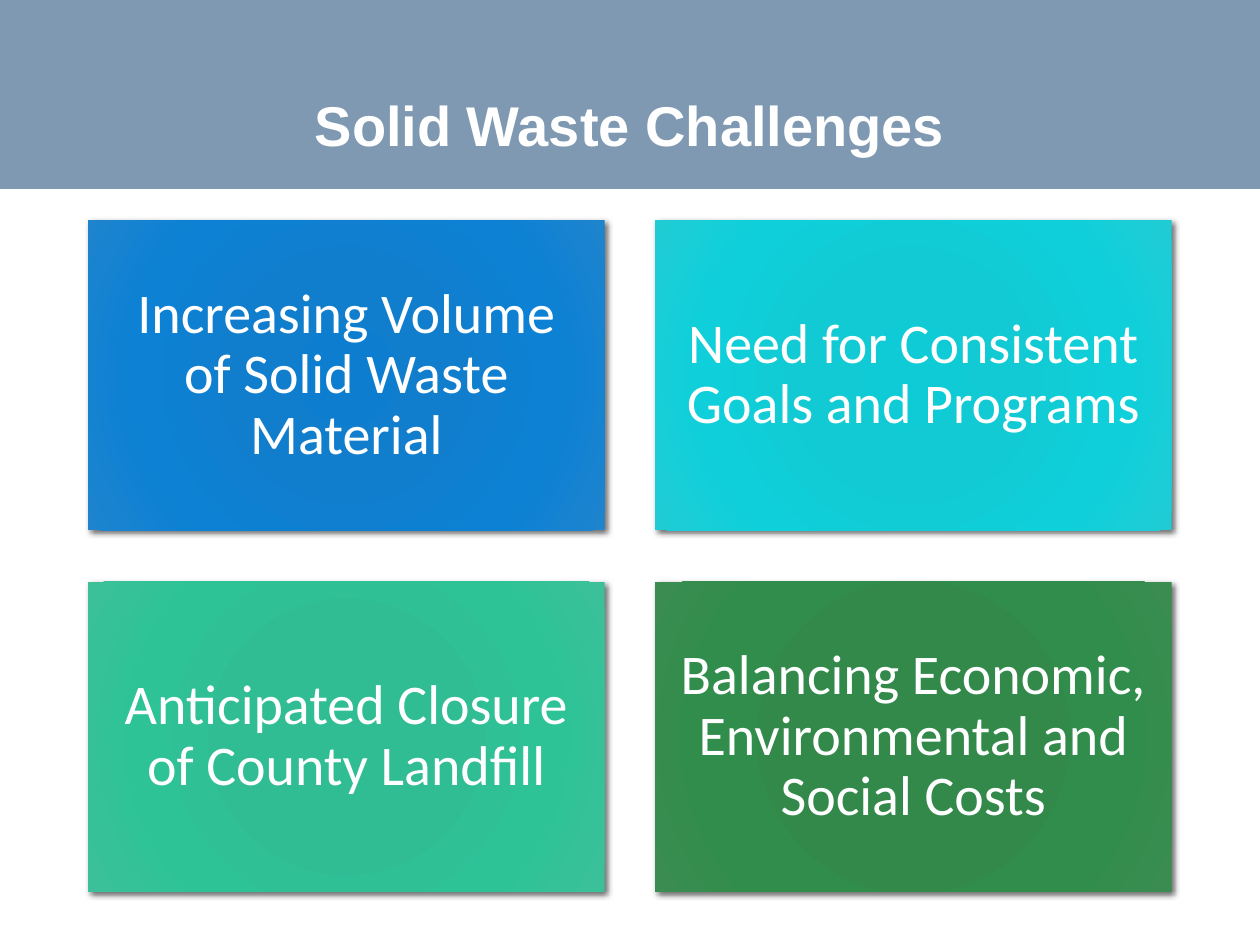
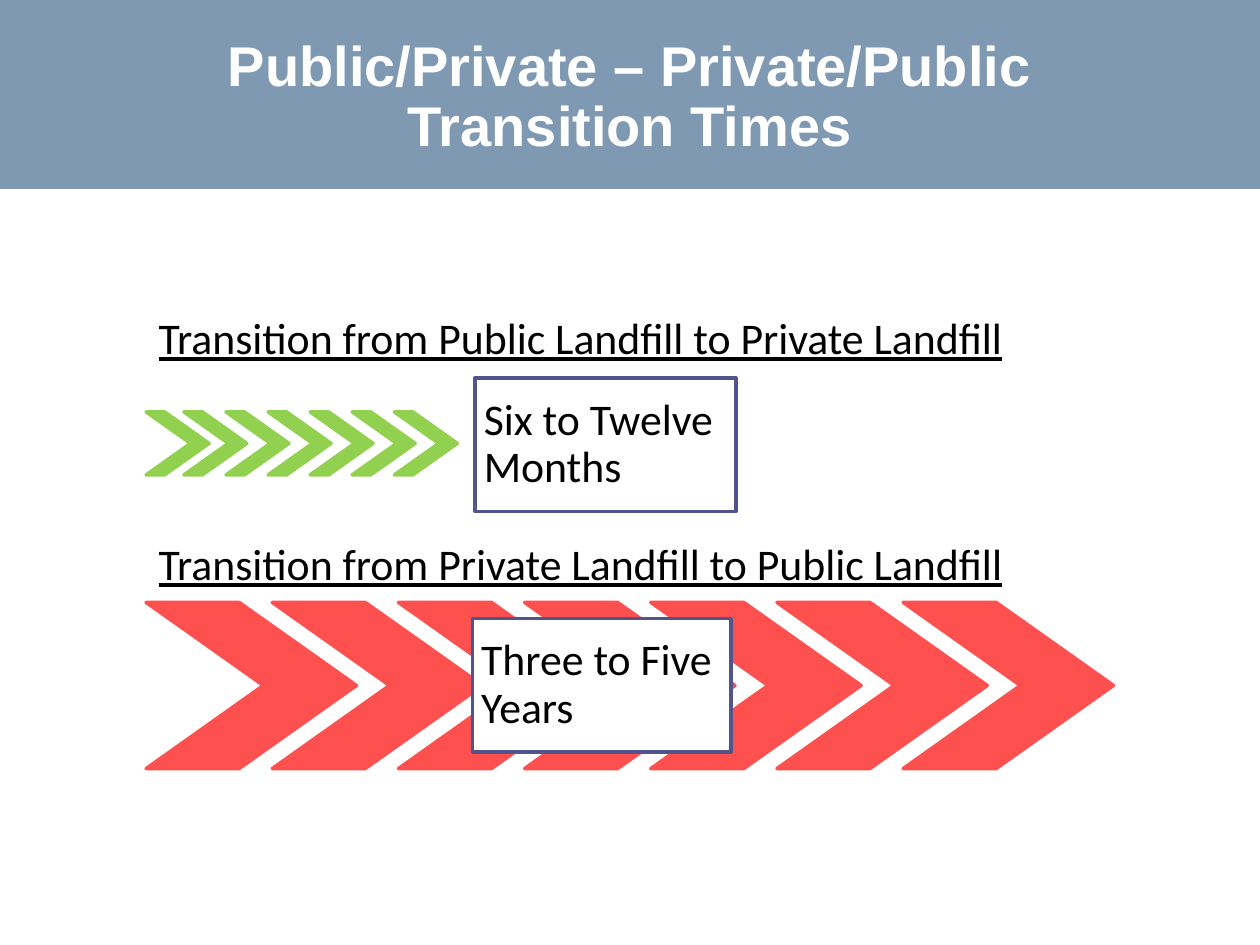
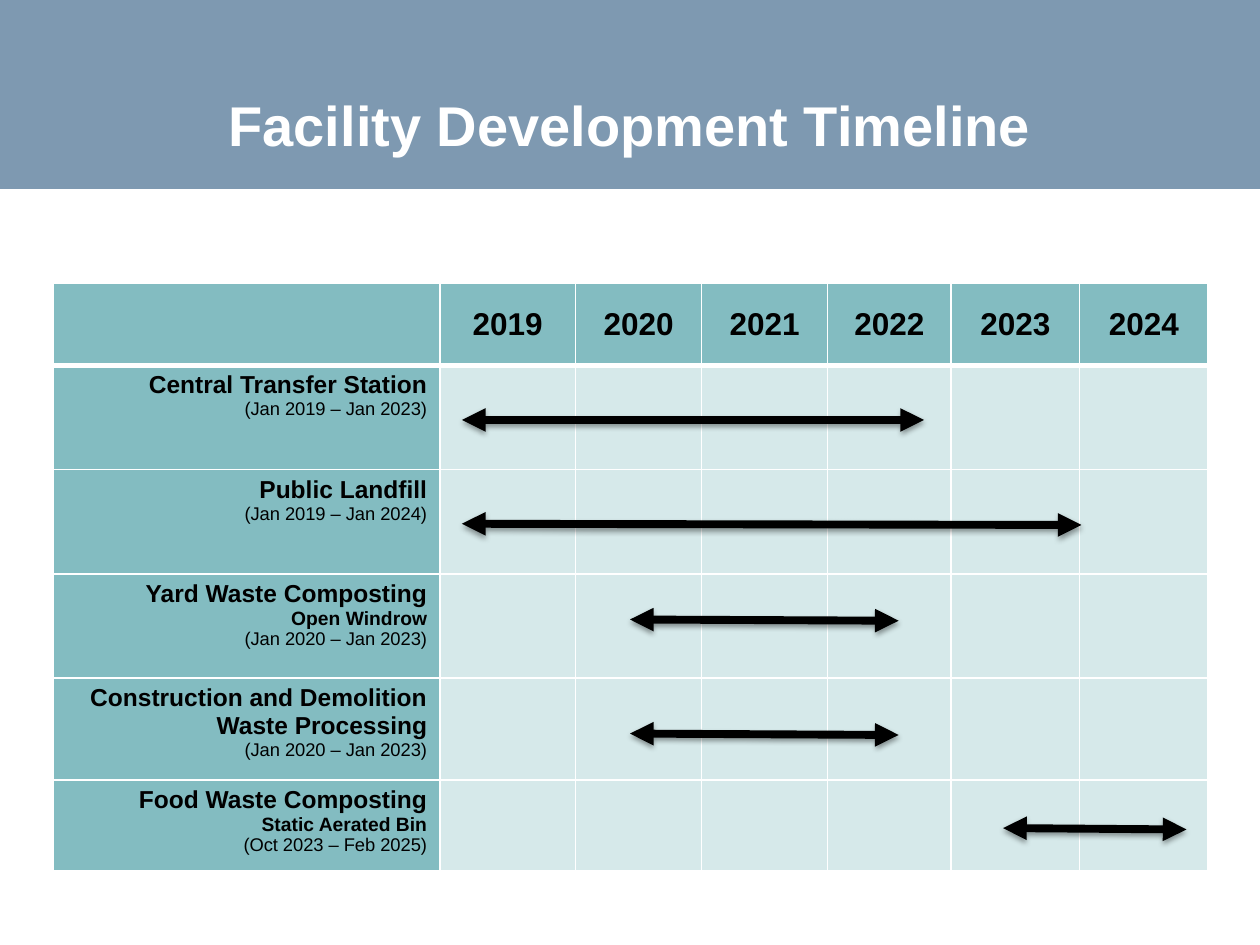
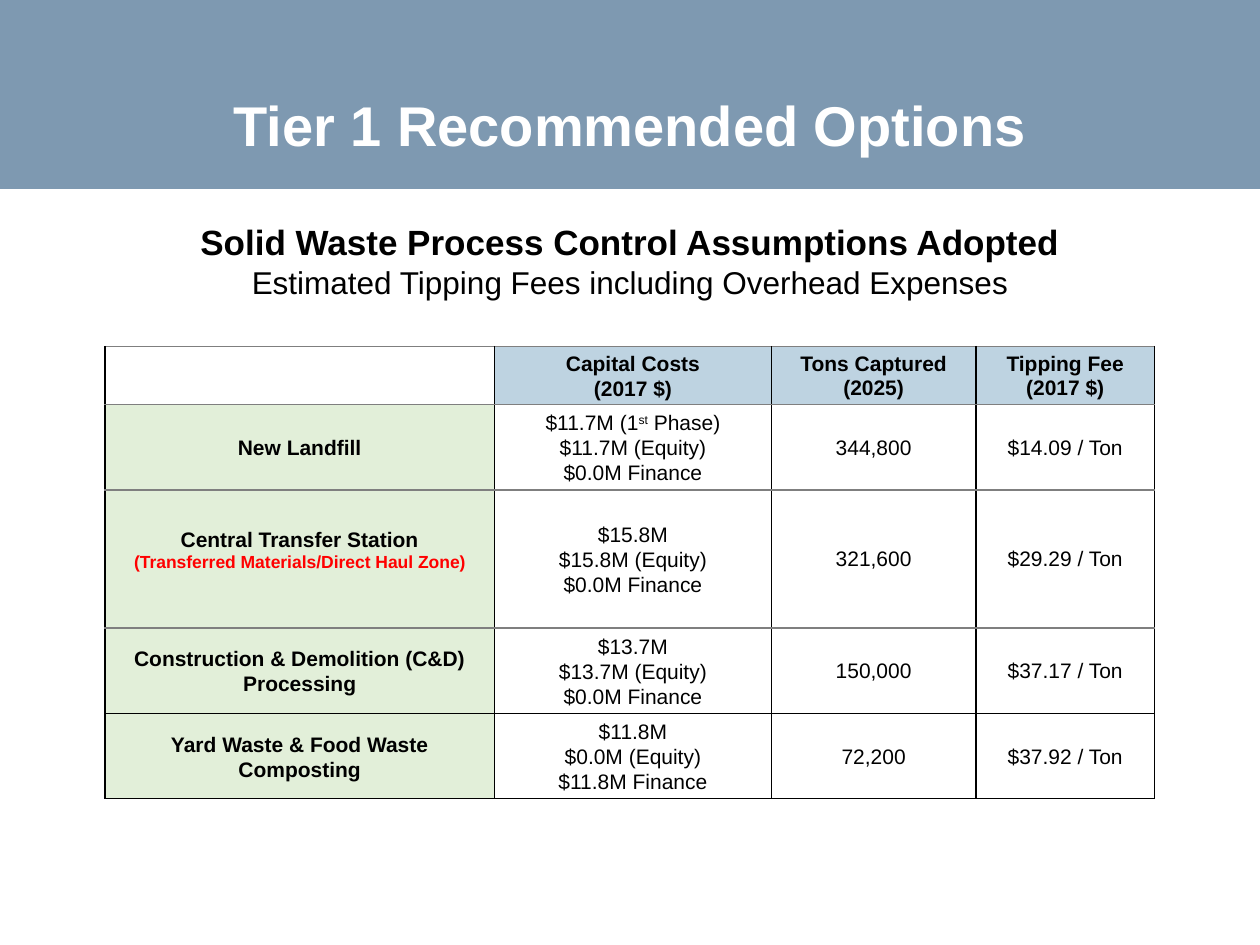
from dataclasses import dataclass
from typing import Optional, Sequence

from lxml.etree import SubElement
from pptx import Presentation
from pptx.dml.color import RGBColor
from pptx.enum.shapes import MSO_CONNECTOR as Connector, MSO_SHAPE as Shape
from pptx.enum.text import MSO_ANCHOR as Anchor, PP_ALIGN as Align
from pptx.oxml import parse_xml
from pptx.oxml.ns import nsdecls, qn
from pptx.util import Pt

# Shared colours and fonts
WHITE, BLACK, GREY, RED = "FFFFFF", "000000", "7F7F7F", "FF0000"
BAND, BOX_LINE = "7E99B1", "53548A"
TEAL, PALE_TEAL = "83BCC1", "D6E9EA"
PALE_BLUE, PALE_GREEN = "BED3E1", "E2EFD9"
SLIDE_WIDTH, SLIDE_HEIGHT = 720, 540


@dataclass(frozen=True)
class Style:
    size: float
    color: str = BLACK
    font: str = "Arial"
    bold: bool = False
    underline: bool = False


TITLE = Style(32, WHITE, bold=True)
CARD_TEXT = Style(32, WHITE, "Calibri")
HEADING = Style(25, font="Calibri", underline=True)
DURATION = Style(25, font="Calibri")
YEAR = Style(18, bold=True)
FACILITY = Style(14, bold=True)
METHOD = Style(11, bold=True)
DATES = Style(10.5)
LABEL = Style(12, bold=True)
VALUE = Style(12)
NOTE = Style(10, RED, bold=True)


@dataclass(frozen=True)
class Line:
    """One paragraph; text between carets is superscript."""
    text: str
    style: Style


@dataclass(frozen=True)
class Box:
    left: float
    top: float
    width: float
    height: float

    def lengths(self) -> list:
        return [Pt(value) for value in (self.left, self.top, self.width, self.height)]


@dataclass(frozen=True)
class Layout:
    align: Align = Align.LEFT
    anchor: Anchor = Anchor.MIDDLE
    margins: tuple = (7.2, 3.6, 7.2, 3.6)  # left, top, right, bottom
    spacing: Optional[object] = None


@dataclass(frozen=True)
class Card:
    text: str
    stops: tuple


@dataclass(frozen=True)
class Transition:
    heading: str
    heading_top: float
    color: str
    chevron: Box
    first_step: float
    step: float
    duration: str
    duration_box: Box


@dataclass(frozen=True)
class Phase:
    lines: tuple
    height: float
    arrow: tuple  # start x, start y, end x, end y


@dataclass(frozen=True)
class Option:
    label: tuple
    costs: tuple
    tons: str
    fee: str
    height: float
    label_bottom: float = 0


def rgb(color: str) -> RGBColor:
    return RGBColor.from_string(color)


# Text helpers
def write(frame, lines: Sequence[Line], layout: Layout) -> None:
    for index, line in enumerate(lines):
        paragraph = frame.add_paragraph() if index else frame.paragraphs[0]
        first, *rest = line.text.split("^")
        paragraph.text = first
        for position, piece in enumerate(rest, 1):
            run = paragraph.add_run()
            run.text = piece
            if position % 2:
                run._r.get_or_add_rPr().set("baseline", "30000")
        paragraph.alignment = layout.align
        if layout.spacing:
            paragraph.line_spacing = layout.spacing
        for run in paragraph.runs:
            font, style = run.font, line.style
            font.size, font.name = Pt(style.size), style.font
            font.bold, font.underline = style.bold, style.underline
            font.color.rgb = rgb(style.color)


def set_frame(frame, lines: Sequence[Line], layout: Layout) -> None:
    frame.word_wrap = True
    frame.vertical_anchor = layout.anchor
    (frame.margin_left, frame.margin_top,
     frame.margin_right, frame.margin_bottom) = map(Pt, layout.margins)
    write(frame, lines, layout)


def add_text(slide, box: Box, lines: Sequence[Line], layout: Layout) -> None:
    set_frame(slide.shapes.add_textbox(*box.lengths()).text_frame, lines, layout)


# Shape helpers
def add_block(slide, kind: Shape, box: Box, fill: str, line: Optional[str] = None):
    shape = slide.shapes.add_shape(kind, *box.lengths())
    shape.shadow.inherit = False
    shape.fill.solid()
    shape.fill.fore_color.rgb = rgb(fill)
    if line:
        shape.line.color.rgb = rgb(line)
        shape.line.width = Pt(2)
    else:
        shape.line.fill.background()
    return shape


def add_shadow(properties, alpha: int, blur: float, distance: float, angle: int) -> None:
    effects = properties.find(qn("a:effectLst"))
    if effects is None:
        effects = SubElement(properties, qn("a:effectLst"))
    effects.append(parse_xml(
        f'<a:outerShdw {nsdecls("a")} blurRad="{Pt(blur)}" dist="{Pt(distance)}" '
        f'dir="{angle * 60000}" algn="ctr" rotWithShape="0"><a:srgbClr val="{BLACK}">'
        f'<a:alpha val="{alpha * 1000}"/></a:srgbClr></a:outerShdw>'))


def set_radial_fill(shape, colors: Sequence[str]) -> None:
    stops = "".join(
        f'<a:gs pos="{place * 1000}"><a:srgbClr val="{color}"/></a:gs>'
        for place, color in zip((0, 34, 70, 100), colors))
    gradient = parse_xml(
        f'<a:gradFill {nsdecls("a")} rotWithShape="1"><a:gsLst>{stops}</a:gsLst>'
        '<a:path path="circle"><a:fillToRect l="100000" t="100000" r="100000" '
        'b="100000"/></a:path></a:gradFill>')
    properties = shape._element.spPr
    properties.replace(properties.find(qn("a:solidFill")), gradient)


def add_double_arrow(slide, points: Sequence[float]) -> None:
    arrow = slide.shapes.add_connector(Connector.STRAIGHT, *map(Pt, points))
    arrow.line.color.rgb = rgb(BLACK)
    arrow.line.width = Pt(4.5)
    properties = arrow._element.spPr
    for end in ("a:headEnd", "a:tailEnd"):
        SubElement(properties.find(qn("a:ln")), qn(end)).set("type", "triangle")
    add_shadow(properties, 38, 3.1, 1.6, 90)


# Table helpers
def add_plain_table(slide, left: float, top: float,
                    widths: Sequence[float], heights: Sequence[float]):
    box = Box(left, top, sum(widths), sum(heights))
    table = slide.shapes.add_table(len(heights), len(widths), *box.lengths()).table
    table.first_row = table.horz_banding = False
    for column, width in zip(table.columns, widths):
        column.width = Pt(width)
    for row, height in zip(table.rows, heights):
        row.height = Pt(height)
    return table


def fill_cell(cell, fill: str, borders: dict, lines: Sequence[Line] = (),
              layout: Layout = Layout()) -> None:
    properties = cell._tc.get_or_add_tcPr()
    for side in "LRTB":
        color, width = borders[side]
        properties.append(parse_xml(
            f'<a:ln{side} {nsdecls("a")} w="{Pt(width)}"><a:solidFill>'
            f'<a:srgbClr val="{color}"/></a:solidFill></a:ln{side}>'))
    cell.fill.solid()
    cell.fill.fore_color.rgb = rgb(fill)
    cell.vertical_anchor = layout.anchor
    (cell.margin_left, cell.margin_top,
     cell.margin_right, cell.margin_bottom) = map(Pt, layout.margins)
    write(cell.text_frame, lines, layout)


def add_titled_slide(presentation, title: str):
    slide = presentation.slides.add_slide(presentation.slide_layouts[6])
    add_block(slide, Shape.RECTANGLE, Box(0, 0, SLIDE_WIDTH, 108), BAND)
    add_text(slide, Box(0, 21.6, SLIDE_WIDTH, 68.4), [Line(title, TITLE)],
             Layout(Align.CENTER, Anchor.BOTTOM, (28.8, 0, 28.8, 0), Pt(34)))
    return slide


# Slide 1: grid of challenge cards
CARDS = (
    Card("Increasing Volume\vof Solid Waste Material",
         ("0D7ECF", "117ECD", "0D81D4", "1E84CE")),
    Card("Need for Consistent Goals and Programs",
         ("0ECBD5", "12CAD3", "0FD0DA", "20CBD4")),
    Card("Anticipated Closure of County Landfill",
         ("2DBE94", "30BD94", "2EC397", "3CC09A")),
    Card("Balancing Economic, Environmental and Social Costs",
         ("2F8949", "32894A", "318D4B", "3A8C51")),
)


def build_challenges(presentation) -> None:
    slide = add_titled_slide(presentation, "Solid Waste Challenges")
    width, height, gap = 295.2, 177.1, 28.8
    layout = Layout(Align.CENTER, margins=(9.6,) * 4, spacing=0.9)
    for index, card in enumerate(CARDS):
        row, column = divmod(index, 2)
        box = Box(50.4 + column * (width + gap), 126 + row * (height + gap + 0.7),
                  width, height)
        shape = add_block(slide, Shape.RECTANGLE, box, card.stops[0])
        set_radial_fill(shape, card.stops)
        add_shadow(shape._element.spPr, 60, 3.5, 2, 45)
        set_frame(shape.text_frame, [Line(card.text, CARD_TEXT)], layout)


# Slide 2: chevron rows
TRANSITIONS = (
    Transition("Transition from Public Landfill to Private Landfill", 168.5, "92D050",
               Box(83.5, 235.4, 36, 36), 21.6, 24.05,
               "Six to Twelve Months", Box(271.5, 216, 149, 76.3)),
    Transition("Transition from Private Landfill to Public Landfill", 297.4, "FF5050",
               Box(83.5, 344.2, 120.2, 95), 72.1, 72.1,
               "Three to Five Years", Box(270, 353.5, 147.6, 76.3)),
)


def build_transitions(presentation) -> None:
    slide = add_titled_slide(
        presentation, "Public/Private – Private/Public\vTransition Times")
    for transition in TRANSITIONS:
        add_text(slide, Box(83.5, transition.heading_top, 512.6, 46.8),
                 [Line(transition.heading, HEADING)],
                 Layout(anchor=Anchor.BOTTOM, margins=(7.2,) * 4, spacing=0.9))
        first = transition.chevron
        second_left = first.left + transition.first_step
        lefts = [first.left] + [second_left + i * transition.step for i in range(6)]
        for left in lefts:
            chevron = add_block(slide, Shape.CHEVRON,
                                Box(left, first.top, first.width, first.height),
                                transition.color, transition.color)
            chevron.adjustments[0] = 0.706
        duration = add_block(slide, Shape.RECTANGLE, transition.duration_box,
                             WHITE, BOX_LINE)
        set_frame(duration.text_frame, [Line(transition.duration, DURATION)],
                  Layout(margins=(5,) * 4, spacing=0.9))


# Slide 3: timeline table with arrows
PHASES = (
    Phase((Line("Central Transfer Station", FACILITY),
           Line("(Jan 2019 – Jan 2023)", DATES)), 59.6, (264, 240, 528, 240)),
    Phase((Line("Public Landfill", FACILITY),
           Line("(Jan 2019 – Jan 2024)", DATES)), 59.6, (264, 299.3, 618, 300)),
    Phase((Line("Yard Waste Composting", FACILITY), Line("Open Windrow", METHOD),
           Line("(Jan 2020 – Jan 2023)", DATES)), 59.6, (360, 354, 513.5, 354.7)),
    Phase((Line("Construction and Demolition Waste Processing", FACILITY),
           Line("(Jan 2020 – Jan 2023)", DATES)), 58.2, (360, 419.2, 513.5, 420)),
    Phase((Line("Food Waste Composting", FACILITY), Line("Static Aerated Bin", METHOD),
           Line("(Oct 2023 – Feb 2025)", DATES)), 52, (573.2, 473.2, 678, 474)),
)


def build_timeline(presentation) -> None:
    slide = add_titled_slide(presentation, "Facility Development Timeline")
    widths = (221.2, 77.5, 72, 72, 70.6, 73.5, 73.5)
    table = add_plain_table(slide, 30.2, 162, widths,
                            [46.8] + [phase.height for phase in PHASES])
    thin = dict.fromkeys("LRTB", (WHITE, 1))
    thick = (WHITE, 3)
    for column in range(len(widths)):
        year = [Line(str(2018 + column), YEAR)] if column else []
        fill_cell(table.cell(0, column), TEAL, {**thin, "B": thick}, year,
                  Layout(Align.CENTER))
    for row, phase in enumerate(PHASES, 1):
        borders = {**thin, "T": thick} if row == 1 else thin
        fill_cell(table.cell(row, 0), TEAL, borders, phase.lines,
                  Layout(Align.RIGHT, Anchor.TOP))
        for column in range(1, len(widths)):
            fill_cell(table.cell(row, column), PALE_TEAL, borders)
    for phase in PHASES:
        add_double_arrow(slide, phase.arrow)


# Slide 4: cost table
COST_HEADERS = (
    (),
    ("Capital Costs", "(2017 $)"),
    ("Tons Captured (2025)",),
    ("Tipping Fee", "(2017 $)"),
)
OPTIONS = (
    Option((Line("New Landfill", LABEL),),
           ("$11.7M (1^st^ Phase)", "$11.7M (Equity)", "$0.0M Finance"),
           "344,800", "$14.09 / Ton", 48.8),
    Option((Line("Central Transfer Station", LABEL),
            Line("(Transferred Materials/Direct Haul Zone)", NOTE)),
           ("$15.8M", "$15.8M (Equity)", "$0.0M Finance"),
           "321,600", "$29.29 / Ton", 79, label_bottom=11.5),
    Option((Line("Construction & Demolition (C&D) Processing", LABEL),),
           ("$13.7M", "$13.7M (Equity)", "$0.0M Finance"),
           "150,000", "$37.17 / Ton", 48.8),
    Option((Line("Yard Waste & Food Waste Composting", LABEL),),
           ("$11.8M", "$0.0M (Equity)", "$11.8M Finance"),
           "72,200", "$37.92 / Ton", 48.8),
)


def build_options(presentation) -> None:
    slide = add_titled_slide(presentation, "Tier 1 Recommended Options")
    add_text(slide, Box(0, 126, SLIDE_WIDTH, 356.4),
             [Line("Solid Waste Process Control Assumptions Adopted",
                   Style(20, bold=True)),
              Line("Estimated Tipping Fees including Overhead Expenses", Style(18))],
             Layout(Align.CENTER, Anchor.TOP, (28.8, 0, 28.8, 0)))
    table = add_plain_table(slide, 60, 198, (222.5, 158.4, 116.7, 102.3),
                            [33.1] + [option.height for option in OPTIONS])

    def layout(column: int, bottom: float = 0) -> Layout:
        margins = (5, 0.7, 5, bottom) if column < 2 else (0,) * 4
        return Layout(Align.CENTER, margins=margins, spacing=1.06)

    black, grey = (BLACK, 1), (GREY, 1)
    edges = (grey, grey, grey, grey, black, black)  # horizontal rules, top to bottom

    def borders(row: int) -> dict:
        return {"L": black, "R": black, "T": edges[row], "B": edges[row + 1]}

    for column, header in enumerate(COST_HEADERS):
        fill_cell(table.cell(0, column), PALE_BLUE if header else WHITE, borders(0),
                  [Line(text, LABEL) for text in header], layout(column))
    for row, option in enumerate(OPTIONS, 1):
        fill_cell(table.cell(row, 0), PALE_GREEN, borders(row), option.label,
                  layout(0, option.label_bottom))
        values = (option.costs, (option.tons,), (option.fee,))
        for column, texts in enumerate(values, 1):
            fill_cell(table.cell(row, column), WHITE, borders(row),
                      [Line(text, VALUE) for text in texts], layout(column))


def main() -> None:
    presentation = Presentation()
    presentation.slide_width = Pt(SLIDE_WIDTH)
    presentation.slide_height = Pt(SLIDE_HEIGHT)
    build_challenges(presentation)
    build_transitions(presentation)
    build_timeline(presentation)
    build_options(presentation)
    presentation.save("out.pptx")


if __name__ == "__main__":
    main()
